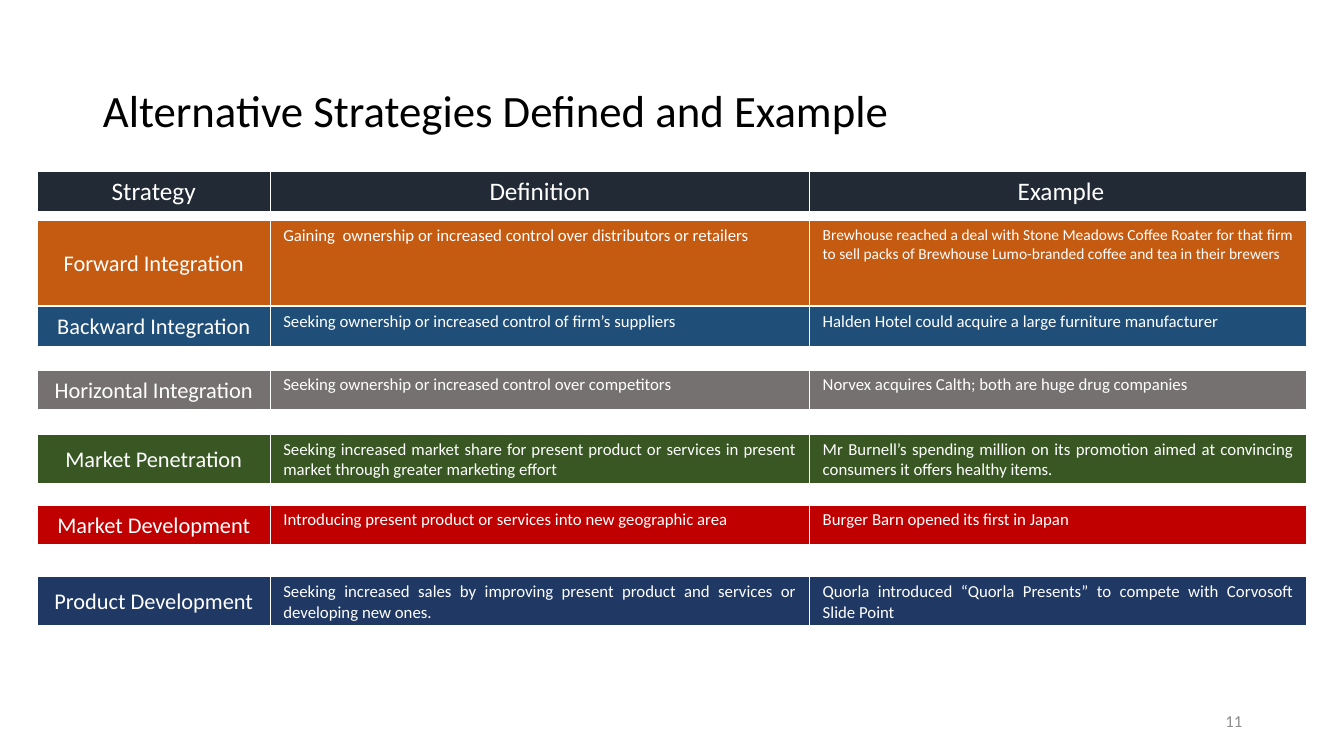
from lxml import etree
from pptx import Presentation
from pptx import util as u
from pptx.dml.color import RGBColor
from pptx.enum import text as t
from pptx.oxml.ns import qn

PX = 9144  # 100 px to the inch
LEFT = 37
COLUMNS = (231, 535, 493)
BORDERS = (("lnL", 1), ("lnR", 1), ("lnT", 1), ("lnB", 3))

# top, height, fill, example size, texts
STRATEGIES = [
    (219, 85, "C55A11", 11, "Forward Integration",
     "Gaining  ownership or increased control over distributors or retailers",
     "Brewhouse reached a deal with Stone Meadows Coffee Roater for that firm "
     "to sell packs of Brewhouse Lumo-branded coffee and tea in their brewers"),
    (304, 41, "1F4E79", 12, "Backward Integration",
     "Seeking ownership or increased control of firm’s suppliers",
     "Halden Hotel could acquire a large furniture manufacturer"),
    (367, 41, "767171", 12, "Horizontal Integration",
     "Seeking ownership or increased control over competitors ",
     "Norvex acquires Calth; both are huge drug companies"),
    (431, 50, "385723", 12, "Market Penetration",
     "Seeking increased market share for present product or services in present "
     "market through greater marketing effort",
     "Mr Burnell’s spending million on its promotion aimed at convincing "
     "consumers it offers healthy items."),
    (501, 41, "C00000", 12, "Market Development",
     "Introducing present product or services into new geographic area",
     "Burger Barn opened its first in Japan"),
    (572, 50, "203864", 12, "Product Development",
     "Seeking increased sales by improving present product and services or "
     "developing new ones.",
     "Quorla introduced “Quorla Presents” to compete with Corvosoft Slide Point"),
]


def px(length):
    return u.Emu(length * PX)


def color(value):
    return RGBColor.from_string(value)


def write(frame, text, size=12, fill="FFFFFF", font="Calibri",
          align=t.PP_ALIGN.LEFT, anchor=t.MSO_ANCHOR.MIDDLE, spacing=None):
    frame.word_wrap = True
    frame.vertical_anchor = anchor
    paragraph = frame.paragraphs[0]
    paragraph.alignment = align
    paragraph.line_spacing = spacing
    run = paragraph.add_run()
    run.text = text
    run.font.name = font
    run.font.size = u.Pt(size)
    run.font.color.rgb = color(fill)


def add_borders(cell, value="FFFFFF"):
    properties = cell._tc.get_or_add_tcPr()
    for index, (tag, width) in enumerate(BORDERS):
        line = etree.Element(qn("a:" + tag), w=str(u.Pt(width)))
        solid = etree.SubElement(line, qn("a:solidFill"))
        etree.SubElement(solid, qn("a:srgbClr"), val=value)
        properties.insert(index, line)


class StrategySlide:
    def __init__(self, presentation):
        self.slide = presentation.slides.add_slide(presentation.slide_layouts[5])

    def title(self, text, left, top, width, height):
        shape = self.slide.shapes.title
        shape.left, shape.top, shape.width, shape.height = map(
            px, (left, top, width, height))
        write(shape.text_frame, text, size=32, fill="000000", spacing=0.9)

    def page_number(self, text, left, top, width, height):
        box = self.slide.shapes.add_textbox(*map(px, (left, top, width, height)))
        write(box.text_frame, text, fill="8C8C8C", align=t.PP_ALIGN.RIGHT)

    def band(self, top, height, fill, cells):
        """Add a one-row table; cells are (text, format) pairs."""
        table = self.slide.shapes.add_table(
            1, len(COLUMNS), *map(px, (LEFT, top, sum(COLUMNS), height))).table
        table.first_row = table.horz_banding = False
        for index, (text, style) in enumerate(cells):
            table.columns[index].width = px(COLUMNS[index])
            cell = table.cell(0, index)
            cell.margin_left = cell.margin_right = px(13)
            cell.margin_top = cell.margin_bottom = px(5)
            cell.fill.solid()
            cell.fill.fore_color.rgb = color(fill)
            add_borders(cell)
            style = dict(style)
            cell.vertical_anchor = style.pop("anchor", t.MSO_ANCHOR.MIDDLE)
            write(cell.text_frame, text, anchor=None, **style)


def main():
    presentation = Presentation()
    presentation.slide_width, presentation.slide_height = px(1333), px(750)
    page = StrategySlide(presentation)
    page.title("Alternative Strategies Defined and Example", 92, 40, 1150, 145)
    page.page_number("11", 942, 695, 300, 40)

    heading = {"size": 18, "align": t.PP_ALIGN.CENTER}
    name_style = {"size": 16, "align": t.PP_ALIGN.CENTER}
    detail = {"size": 12, "align": t.PP_ALIGN.JUSTIFY, "anchor": t.MSO_ANCHOR.TOP}
    page.band(170, 41, "222A35",
              [(label, heading) for label in ("Strategy", "Definition", " Example")])
    for top, height, fill, size, name, definition, example in STRATEGIES:
        page.band(top, height, fill, [
            (name, name_style),
            (definition, detail),
            (example, {**detail, "size": size})])
    presentation.save("out.pptx")


if __name__ == "__main__":
    main()
